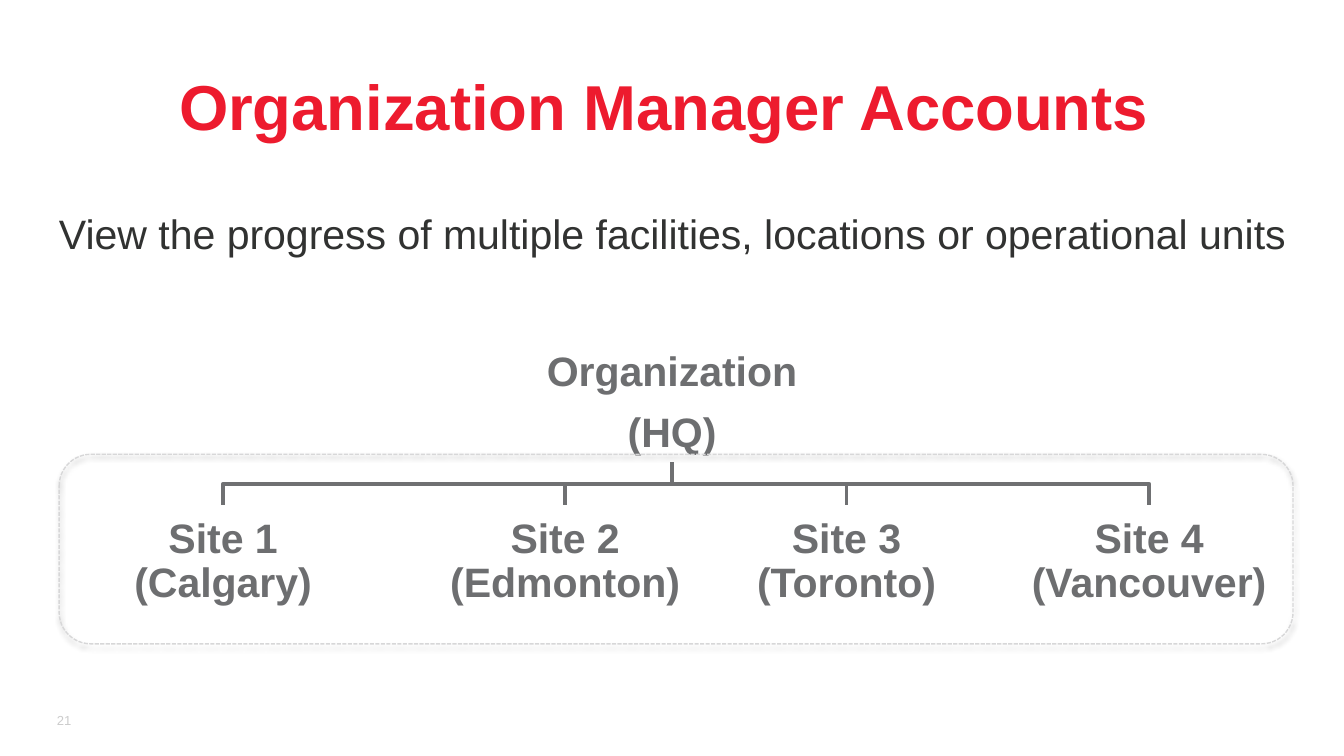
from lxml import etree
from pptx import Presentation
from pptx.dml.color import RGBColor
from pptx.enum.dml import MSO_LINE
from pptx.enum.shapes import MSO_SHAPE as SHAPE
from pptx.enum.text import MSO_ANCHOR as ANCHOR, MSO_AUTO_SIZE as AUTO, PP_ALIGN as ALIGN
from pptx.oxml import parse_xml
from pptx.oxml.ns import nsdecls, qn
from pptx.util import Pt

RED = RGBColor(0xED, 0x1B, 0x2E)
INK = RGBColor(0x31, 0x32, 0x31)
GRAY = RGBColor(0x6D, 0x6E, 0x70)
LINE_GRAY = RGBColor(0x6F, 0x70, 0x72)
BORDER_GRAY = RGBColor(0xD7, 0xD7, 0xD8)
NUMBER_GRAY = RGBColor(0xCC, 0xCC, 0xCC)
WHITE = RGBColor(0xFF, 0xFF, 0xFF)


def place(shape, left, top, width, height):
    frame = {"left": left, "top": top, "width": width, "height": height}
    for name, value in frame.items():
        setattr(shape, name, Pt(value))


def write(shape, lines, frame_format, para_format, size, color, bold=False):
    frame = shape.text_frame
    frame.text = "\n".join(lines)
    settings = {"word_wrap": True, "auto_size": AUTO.NONE, **frame_format}
    for name, value in settings.items():
        setattr(frame, name, value)
    for para in frame.paragraphs:
        for name, value in para_format.items():
            setattr(para, name, value)
        for span in para.runs:
            span.font.color.rgb = color
            font_format = {"name": "Arial", "size": Pt(size), "bold": bold}
            for name, value in font_format.items():
                setattr(span.font, name, value)


deck = Presentation()
deck.slide_width, deck.slide_height = Pt(720), Pt(405)
page = deck.slides.add_slide(deck.slide_layouts[1])
shapes = page.shapes

flush = {"margin_left": 0, "margin_right": 0, "margin_bottom": Pt(3.6),
         "vertical_anchor": ANCHOR.TOP}
centered = {"alignment": ALIGN.CENTER, "space_before": Pt(0)}

title = shapes.title
place(title, 31.7, 28.8, 648, 32.4)
write(title, ["Organization Manager Accounts"], {**flush, "margin_top": Pt(7)},
      centered, 34, RED, True)

body = page.placeholders[1]
place(body, 25.2, 105.8, 670.3, 70.6)
write(body, ["View the progress of multiple facilities, locations or operational units"],
      {**flush, "margin_top": Pt(6)}, {**centered, "space_after": Pt(12)}, 22, INK)
properties = body.text_frame.paragraphs[0]._p.get_or_add_pPr()
properties.set("marL", "0")
properties.set("indent", "0")
etree.SubElement(properties, qn("a:buNone"))

number = shapes.add_textbox(Pt(22.3), Pt(375.1), Pt(23), Pt(21.6))
write(number, ["21"], {"vertical_anchor": ANCHOR.MIDDLE}, {"alignment": ALIGN.RIGHT},
      7, NUMBER_GRAY)

hq_top, site_top, box_height, bar_top = 186.5, 271.4, 59.8, 259.2
hq_bottom = hq_top + box_height
hq = (261.4, 197.3, hq_top, ["Organization", "(HQ)"])
sites = [
    (27.4, 184.3, site_top, ["Site 1\v(Calgary)"]),
    (236.9, 131.8, site_top, ["Site 2\v(Edmonton)"]),
    (393.8, 119.5, site_top, ["Site 3\v(Toronto)"]),
    (538.6, 154.1, site_top, ["Site 4\v(Vancouver)"]),
]

hq_center = hq[0] + hq[1] / 2
for left, width, top, lines in reversed(sites):
    center = left + width / 2
    builder = shapes.build_freeform(Pt(hq_center), Pt(hq_bottom))
    corners = [(hq_center, bar_top), (center, bar_top), (center, top)]
    builder.add_line_segments([(Pt(x), Pt(y)) for x, y in corners], close=False)
    branch = builder.convert_to_shape()
    branch.shadow.inherit = False
    branch.fill.background()
    branch.line.color.rgb = LINE_GRAY
    branch.line.width = Pt(2)

inset = {f"margin_{side}": Pt(1.4) for side in ("left", "top", "right", "bottom")}
for left, width, top, lines in [hq, *sites]:
    box = shapes.add_shape(SHAPE.RECTANGLE, Pt(left), Pt(top), Pt(width), Pt(box_height))
    box.shadow.inherit = False
    box.fill.background()
    box.line.color.rgb = WHITE
    box.line.width = Pt(2)
    write(box, lines, {**inset, "vertical_anchor": ANCHOR.MIDDLE},
          {**centered, "line_spacing": 0.9, "space_after": Pt(8.8)}, 22, GRAY, True)

group_border = shapes.add_shape(SHAPE.ROUNDED_RECTANGLE, Pt(31.7), Pt(243.4), Pt(661), Pt(101.5))
group_border.fill.background()
group_border.line.color.rgb = BORDER_GRAY
group_border.line.width = Pt(0.75)
group_border.line.dash_style = MSO_LINE.SQUARE_DOT
group_border._element.spPr.append(parse_xml(
    f'<a:effectLst {nsdecls("a")}>'
    f'<a:outerShdw blurRad="{Pt(3.1)}" dist="{Pt(1.8)}" dir="5400000" rotWithShape="0">'
    '<a:srgbClr val="000000"><a:alpha val="35000"/></a:srgbClr>'
    '</a:outerShdw></a:effectLst>'))

deck.save("out.pptx")
